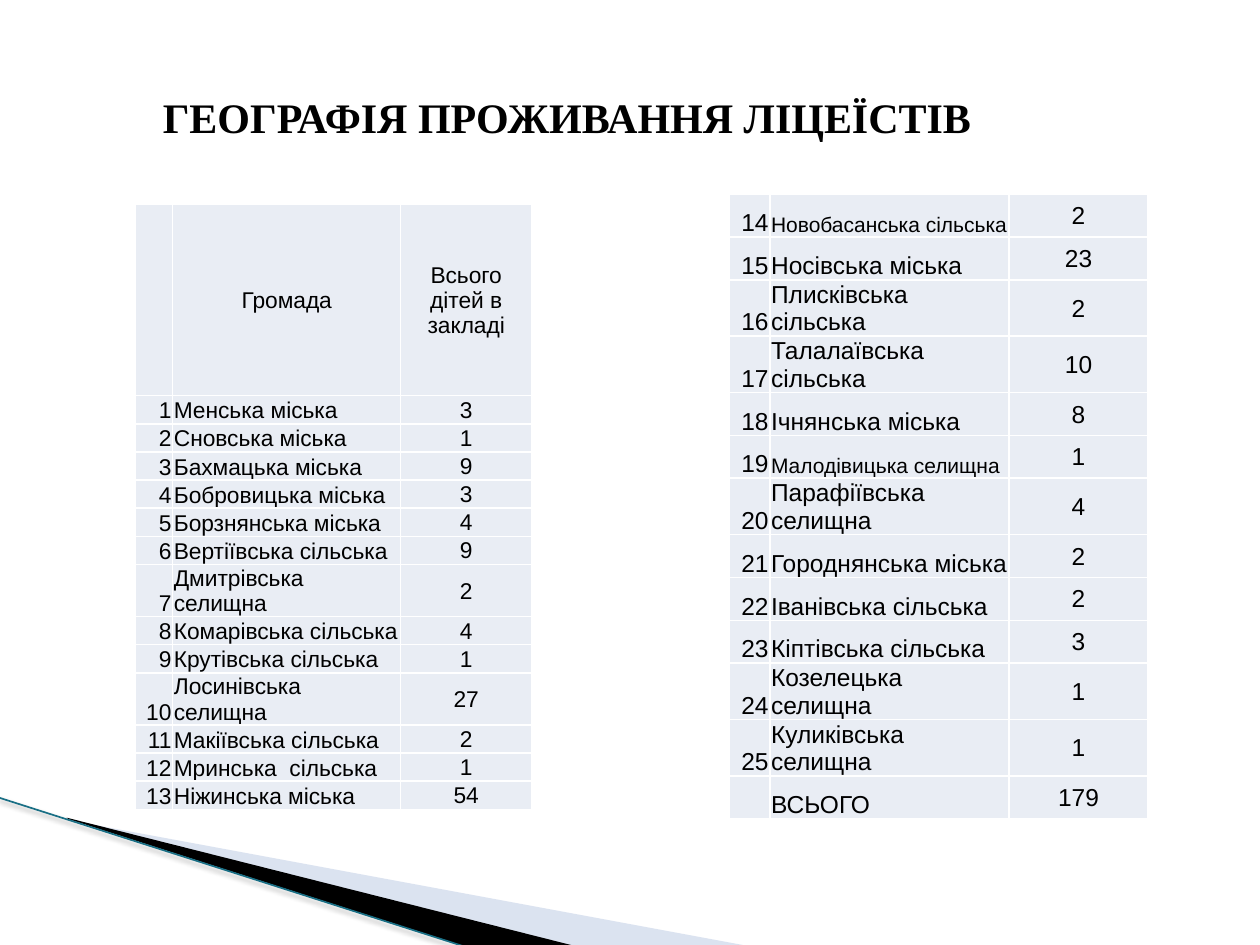
"""Builds the slide on where the lyceum's pupils live."""
import pptx
import pptx.dml.color
import pptx.enum.shapes
import pptx.enum.text
import pptx.oxml
import pptx.util
from pptx.oxml.ns import nsdecls, qn

TITLE = "ГЕОГРАФІЯ ПРОЖИВАННЯ ЛІЦЕЇСТІВ"
FIRST = [
    ("Менська міська", 3), ("Сновська міська", 1), ("Бахмацька міська", 9),
    ("Бобровицька міська", 3), ("Борзнянська міська", 4),
    ("Вертіївська сільська", 9), ("Дмитрівська селищна", 2),
    ("Комарівська сільська", 4), ("Крутівська сільська", 1),
    ("Лосинівська селищна", 27), ("Макіївська сільська", 2),
    ("Мринська  сільська", 1), ("Ніжинська міська", 54),
]
SECOND = [
    ("Новобасанська сільська", 2), ("Носівська міська", 23),
    ("Плисківська сільська", 2), ("Талалаївська сільська", 10),
    ("Ічнянська міська", 8), ("Малодівицька селищна", 1),
    ("Парафіївська селищна", 4), ("Городнянська міська", 2),
    ("Іванівська сільська", 2), ("Кіптівська сільська", 3),
    ("Козелецька селищна", 1), ("Куликівська селищна", 1),
]
HEADER = ("", "Громада", "Всього дітей в закладі")
TOTAL = ("", "ВСЬОГО", 179)
CONDENSED = {"Новобасанська сільська", "Малодівицька селищна"}
CENTRED_ROWS = {"", "1", "2"}
WEDGES = [
    ([(55, 651), (595, 751), (456, 751), (55, 650)], "A7B9DB", 40),
    ([(53, 649), (457, 751), (372, 752), (54, 650)], "000000", 100),
]
ALIGN = pptx.enum.text.PP_ALIGN
ANCHOR = pptx.enum.text.MSO_ANCHOR
Inches, Pt = pptx.util.Inches, pptx.util.Pt


def rgb(value):
    """Return the colour for a hex string."""
    return pptx.dml.color.RGBColor.from_string(value)


def style(font, name, size, bold=False):
    """Set a black font."""
    font.name, font.size, font.bold = name, Pt(size), bold
    font.color.rgb = rgb("000000")


def add_wedge(s, points, color, opacity):
    """Draw one wedge of the corner ornament from points in hundredths of an inch."""
    builder = s.shapes.build_freeform(*points[0], scale=Inches(0.01))
    builder.add_line_segments(points[1:], close=True)
    sp = builder.convert_to_shape()
    sp.shadow.inherit = False
    sp.line.fill.background()
    sp.fill.solid()
    sp.fill.fore_color.rgb = rgb(color)
    if opacity < 100:
        clr = sp.fill._xPr.find(".//" + qn("a:srgbClr"))
        clr.append(pptx.oxml.parse_xml(
            f'<a:alpha {nsdecls("a")} val="{opacity * 1000}"/>'))


def add_edge(s, x1, y1, x2, y2):
    """Draw the shadowed line along the ornament."""
    line = s.shapes.add_connector(
        pptx.enum.shapes.MSO_CONNECTOR.STRAIGHT,
        Inches(x1), Inches(y1), Inches(x2), Inches(y2))
    line.line.color.rgb = rgb("196F85")
    line.line.width = Pt(0.96)
    line._element.spPr.append(pptx.oxml.parse_xml(
        f'<a:effectLst {nsdecls("a")}><a:outerShdw blurRad="{Pt(3.1)}" '
        f'dist="{Pt(1.6)}" dir="5400000" algn="t" rotWithShape="0">'
        '<a:srgbClr val="000000"><a:alpha val="38000"/></a:srgbClr>'
        '</a:outerShdw></a:effectLst>'))


def add_communities(s, rows, left, top, widths, heights, size, centred):
    """Add a table of number, community and pupils."""
    table = s.shapes.add_table(
        len(rows), len(widths), Inches(left), Inches(top),
        Inches(sum(widths)), Pt(sum(heights))).table
    table.first_row = table.horz_banding = False
    for column, width in zip(table.columns, widths):
        column.width = Inches(width)
    for row, height, values in zip(table.rows, heights, rows):
        row.height = Pt(height)
        header = values == HEADER
        aligns = (ALIGN.RIGHT, ALIGN.CENTER if header else ALIGN.LEFT, ALIGN.CENTER)
        middle = str(values[0]) in centred
        for i, (cell, value, align) in enumerate(zip(row.cells, values, aligns)):
            cell.fill.solid()
            cell.fill.fore_color.rgb = rgb("E9EDF4")
            cell.margin_left = cell.margin_right = cell.margin_top = Inches(0.01)
            cell.margin_bottom = 0
            cell.vertical_anchor = ANCHOR.MIDDLE if middle or i == 2 else ANCHOR.BOTTOM
            p = cell.text_frame.paragraphs[0]
            p.text = str(value)
            p.alignment = align
            for r in p.runs:
                style(r.font, "Arial", 12 if value in CONDENSED else size)


def main():
    """Build and save the slide."""
    prs = pptx.Presentation()
    prs.slide_width, prs.slide_height = Inches(10), Inches(7.5)
    s = prs.slides.add_slide(prs.slide_layouts[5])
    for wedge in WEDGES:
        add_wedge(s, *wedge)
    add_edge(s, -0.01, 6.33, 3.71, 7.52)

    numbered = [(n, *row) for n, row in enumerate(FIRST + SECOND, 1)]
    first = [HEADER] + numbered[:len(FIRST)]
    second = numbered[len(FIRST):] + [TOTAL]
    add_communities(s, second, 5.79, 1.54, (0.32, 1.9, 1.1),
                    [24.5] * len(second), 14, set())
    add_communities(s, first, 1.07, 1.62, (0.3, 1.81, 1.04),
                    [109.5] + [16.1] * len(FIRST), 13, CENTRED_ROWS)

    title = s.shapes.title
    title.left, title.top = 0, Inches(0.3)
    title.width, title.height = Inches(9), Inches(1.25)
    tf = title.text_frame
    tf.text = TITLE
    tf.vertical_anchor = ANCHOR.MIDDLE
    p = tf.paragraphs[0]
    p.alignment = ALIGN.CENTER
    style(p.runs[0].font, "Times New Roman", 24, True)
    prs.save("out.pptx")


if __name__ == "__main__":
    main()
